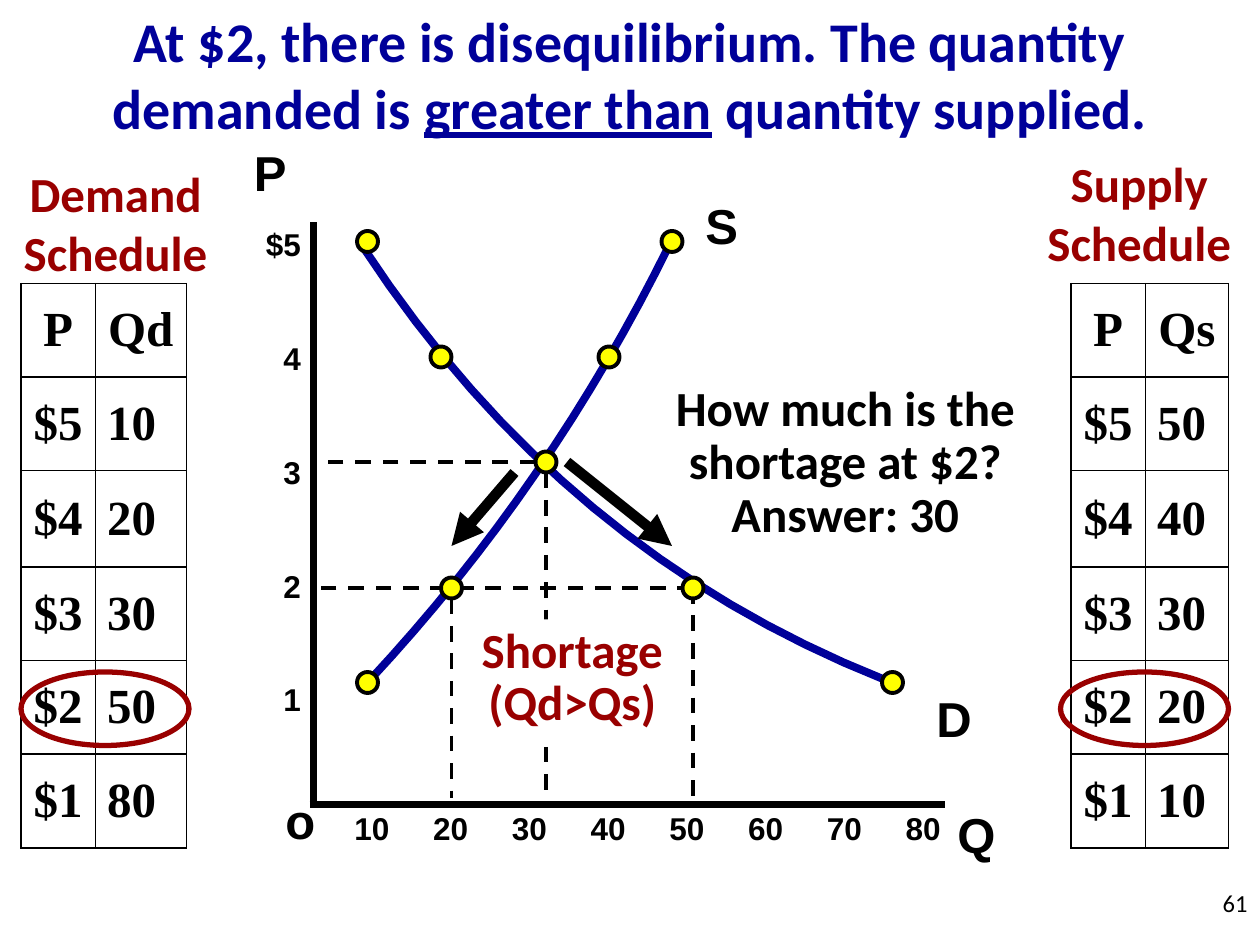
from lxml import etree
from pptx import Presentation
from pptx.dml.color import RGBColor
from pptx.enum.dml import MSO_LINE
from pptx.enum.shapes import MSO_CONNECTOR, MSO_SHAPE
from pptx.enum.text import MSO_ANCHOR, MSO_AUTO_SIZE, PP_ALIGN
from pptx.oxml.ns import qn
from pptx.util import Pt

LEFT, CENTER, RIGHT = PP_ALIGN.LEFT, PP_ALIGN.CENTER, PP_ALIGN.RIGHT
TOP, MIDDLE = MSO_ANCHOR.TOP, MSO_ANCHOR.MIDDLE
OVAL, RECTANGLE = MSO_SHAPE.OVAL, MSO_SHAPE.RECTANGLE
STRAIGHT, DASH, NO_AUTOFIT = MSO_CONNECTOR.STRAIGHT, MSO_LINE.DASH, MSO_AUTO_SIZE.NONE

THEME = {
    "black": "000000", "white": "FFFFFF", "navy": "000099", "red": "990000", "yellow": "FFFF00",
    "body": "Calibri", "graph": "Arial", "table": "Times New Roman",
    "title": 32, "large": 28, "axis": 18, "number": 14,
}

# Content: lengths in points
TITLE = ("At $2, there is disequilibrium. The quantity demanded is ",
         "greater than", " quantity supplied.")
PRICES = ["$5", "$4", "$3", "$2", "$1"]
SCHEDULES = [  # heading, heading box, column header, quantities, table left, column widths, ring left
    ("Demand Schedule", (0, 90, 132, 74), "Qd", [10, 20, 30, 50, 80], 12, (42.5, 52), 12),
    ("Supply Schedule", (582, 84, 138, 74), "Qs", [50, 40, 30, 20, 10], 612, (42.5, 47.5), 606),
]
ROW_HEIGHTS = [53.5, 53.5, 55, 53.5, 53.5, 53.5]
CELL_MARGIN = 6.8
PRICE_TICKS = ["$5", "4", "3", "2", "1"]
QUANTITY_TICKS = range(10, 90, 10)
AXES = [((179, 127), (179, 462)), ((177, 460), (540, 460))]
GRAPH_LABELS = [("P", 138, 78), ("S", 396, 108), ("D", 528, 390), ("Q", 540, 456), ("o", 156, 448)]
GUIDES = [((258, 342), (258, 456)), ((396, 336), (396, 462)), ((396, 336), (180, 336)),
          ((306, 264), (180, 264)), ((312, 270), (312, 456))]
CURVES = [  # start, control and end of a quadratic curve
    ((208, 142), (322, 315.5), (504.5, 388)),
    ((211, 389), (315, 277.5), (383, 139)),
]
MARKERS = [(210, 138), (252, 204), (312, 264), (396, 336), (510, 390),
           (210, 390), (258, 336), (348, 204), (384, 138)]
SHIFTS = [((294, 270), (258, 312)), ((324, 264), (384, 312))]
SHORTAGE = ["Shortage", "(Qd>Qs)"]
QUESTION = ["How much is the shortage at $2?", "Answer: 30"]


def color(name):
    return RGBColor.from_string(THEME[name])


def points(*values):
    return [Pt(value) for value in values]


def fill_text(frame, paragraphs, font, size, ink, align=CENTER, anchor=TOP, bold=True, spacing=None):
    frame.auto_size = NO_AUTOFIT
    frame.vertical_anchor = anchor
    frame.text = "\n".join(paragraphs)
    for paragraph in frame.paragraphs:
        paragraph.alignment = align
        paragraph.line_spacing = spacing
        for run in paragraph.runs:
            style_run(run, font, size, ink, bold)


def style_run(run, font, size, ink, bold=True):
    run.font.name, run.font.size = THEME[font], Pt(THEME[size])
    run.font.bold, run.font.color.rgb = bold, color(ink)


def add_text(slide, box, paragraphs, *style, wrap=True, **options):
    frame = slide.shapes.add_textbox(*points(*box)).text_frame
    fill_text(frame, paragraphs, *style, **options)
    frame.word_wrap = wrap


def add_line(slide, start, end, width, dash=None, arrow=False):
    line = slide.shapes.add_connector(STRAIGHT, *points(*start, *end))
    line.line.color.rgb, line.line.width = color("black"), Pt(width)
    properties = line._element.spPr
    if dash:
        line.line.dash_style = dash
    if arrow:
        etree.SubElement(properties.get_or_add_ln(), qn("a:tailEnd"), type="triangle")
    etree.SubElement(properties, qn("a:effectLst"))


def style_shape(shape, fill=None, ink=None, width=0):
    shape.shadow.inherit = False
    if fill:
        shape.fill.solid()
        shape.fill.fore_color.rgb = color(fill)
    else:
        shape.fill.background()
    if ink:
        shape.line.color.rgb, shape.line.width = color(ink), Pt(width)
    else:
        shape.line.fill.background()


def add_curve(slide, start, control, end, steps=16):
    curve_points = []
    for step in range(steps + 1):
        t = step / steps
        curve_points.append(tuple(Pt((1 - t) ** 2 * a + 2 * t * (1 - t) * b + t ** 2 * c)
                                  for a, b, c in zip(start, control, end)))
    builder = slide.shapes.build_freeform(*curve_points[0])
    builder.add_line_segments(curve_points[1:], close=False)
    style_shape(builder.convert_to_shape(), ink="navy", width=4.5)


def add_borders(cell):
    properties = cell._tc.get_or_add_tcPr()
    for index, side in enumerate(("lnL", "lnR", "lnT", "lnB")):
        border = etree.Element(qn("a:" + side), w=str(Pt(1)))
        paint = etree.SubElement(border, qn("a:solidFill"))
        etree.SubElement(paint, qn("a:srgbClr"), val=THEME["black"])
        properties.insert(index, border)


def add_schedule(slide, header, quantities, left, widths):
    rows = [("P", header), *zip(PRICES, map(str, quantities))]
    box = points(left, 162, sum(widths), sum(ROW_HEIGHTS))
    table = slide.shapes.add_table(len(rows), 2, *box).table
    table.first_row = table.horz_banding = False
    for column, width in zip(table.columns, widths):
        column.width = Pt(width)
    for r, row in enumerate(rows):
        table.rows[r].height = Pt(ROW_HEIGHTS[r])
        for c, value in enumerate(row):
            cell = table.cell(r, c)
            cell.text = value
            cell.vertical_anchor = MIDDLE
            cell.margin_left = cell.margin_right = Pt(CELL_MARGIN)
            cell.fill.background()
            add_borders(cell)
            paragraph = cell.text_frame.paragraphs[0]
            paragraph.alignment = LEFT if r and c else CENTER
            style_run(paragraph.runs[0], "table", "large", "black")


def main():
    deck = Presentation()
    deck.slide_width, deck.slide_height = Pt(720), Pt(540)
    slide = deck.slides.add_slide(deck.slide_layouts[5])

    # Title with its underlined phrase
    title = slide.shapes.title
    title.left, title.top, title.width, title.height = points(0, 0, 720, 84)
    fill_text(title.text_frame, TITLE[:1], "body", "title", "navy", anchor=MIDDLE)
    for part in TITLE[1:]:
        run = title.text_frame.paragraphs[0].add_run()
        run.text = part
        style_run(run, "body", "title", "navy")
        run.font.underline = part == TITLE[1]

    # Guides and axes
    for start, end in GUIDES:
        add_line(slide, start, end, 2.25, dash=DASH)
    for start, end in AXES:
        add_line(slide, start, end, 4)

    # Axis ticks and graph labels
    for i, tick in enumerate(PRICE_TICKS):
        add_text(slide, (139, 127.5 + 65 * i, 40, 24), [tick], "graph", "axis", "black",
                 align=RIGHT, anchor=MIDDLE, wrap=False)
    for i, tick in enumerate(QUANTITY_TICKS):
        add_text(slide, (192.5 + 45 * i, 461, 40, 24), [str(tick)], "graph", "axis", "black",
                 anchor=MIDDLE, wrap=False)
    for label, left, top in GRAPH_LABELS:
        add_text(slide, (left, top, 36, 41), [label], "graph", "large", "black",
                 align=LEFT, wrap=False)

    # Demand and supply curves with their points
    for curve in CURVES:
        add_curve(slide, *curve)
    for x, y in MARKERS:
        marker = slide.shapes.add_shape(OVAL, *points(x - 6, y - 6, 12, 12))
        style_shape(marker, "yellow", "black", 2.25)

    # Schedules, each with the $2 row ringed
    for heading, box, header, quantities, left, widths, ring_left in SCHEDULES:
        add_text(slide, box, [heading], "body", "large", "red")
        add_schedule(slide, header, quantities, left, widths)
        ring = slide.shapes.add_shape(OVAL, *points(ring_left, 384, 96, 42))
        style_shape(ring, ink="red", width=3)

    # Movements along the curves
    for start, end in SHIFTS:
        add_line(slide, start, end, 6, arrow=True)

    # Shortage note, question and slide number
    note = slide.shapes.add_shape(RECTANGLE, *points(264, 354, 126, 68))
    style_shape(note, "white")
    fill_text(note.text_frame, SHORTAGE, "body", "large", "red", spacing=0.9)
    add_text(slide, (372, 216, 222, 98), QUESTION, "body", "large", "black", spacing=0.9)
    add_text(slide, (570, 504, 150, 36), ["61"], "body", "number", "black", align=RIGHT, bold=False)

    deck.save("out.pptx")


if __name__ == "__main__":
    main()
